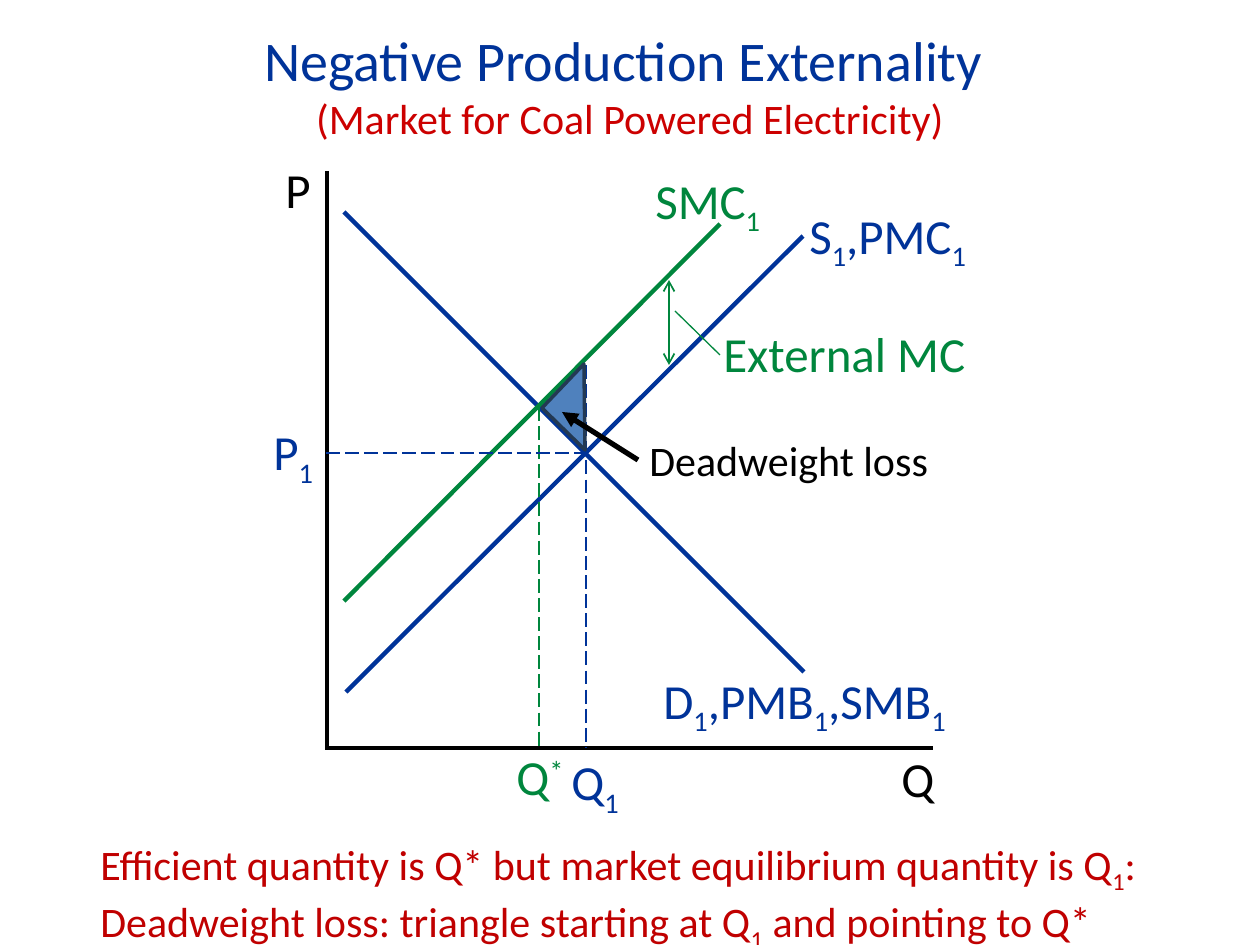
import pptx
import pptx.util
import pptx.dml.color
import pptx.enum.dml
import pptx.enum.shapes
import pptx.enum.text
import pptx.oxml.ns
import lxml.etree

RGB = pptx.dml.color.RGBColor
BLUE = RGB(0x00, 0x33, 0x99)
GREEN = RGB(0x00, 0x86, 0x3D)
BLACK = RGB(0, 0, 0)
RED = RGB(0xCC, 0, 0)
DARK_RED = RGB(0xC0, 0, 0)
FILL = RGB(0x4F, 0x81, 0xBD)
EDGE = RGB(0x23, 0x39, 0x53)
FONT = "Calibri"
SCALE = 914400 / 126
SHIFT = {"1": "-25000", "*": "30000"}

# Every second piece between bars is a subscript or superscript.
# text, box (left, top, width, height), size, colour, line spacing
LABELS = [
    ("D|1|,PMB|1|,SMB|1", (651, 664, 325, 72), 28, BLUE, None),
    ("Q", (889, 742, 64, 72), 28, BLACK, None),
    ("P", (273, 165, 57, 62), 28, BLACK, 0.8),
    ("S|1|,PMC|1", (797, 199, 189, 72), 28, BLUE, None),
    ("Q|1", (559, 752, 94, 60), 28, BLUE, 0.8),
    ("SMC|1", (643, 164, 151, 72), 28, GREEN, None),
    ("Q|*", (504, 752, 94, 62), 28, GREEN, 0.8),
    ("External MC", (711, 317, 276, 72), 28, GREEN, None),
    ("Deadweight loss", (637, 428, 306, 63), 24, BLACK, None),
    ("P|1", (261, 422, 73, 62), 28, BLUE, 0.8),
]
TITLE = [("Negative Production Externality ", 32, BLUE),
         ("(Market for Coal Powered Electricity)", 24, RED)]
NOTES = ["Efficient quantity is Q* but market equilibrium quantity is Q|1|:",
         "Deadweight loss: triangle starting at Q|1| and pointing to Q*"]

# start, end, colour, width in points
CURVES = [
    ((346, 692), (803, 236), BLUE, 2.5),
    ((327, 171), (327, 750), BLACK, 2.5),
    ((329, 748), (933, 748), BLACK, 2.5),
    ((344, 212), (804, 672), BLUE, 2.5),
    ((344, 601), (720, 224), GREEN, 2.5),
    ((675, 311), (720, 355), GREEN, 0.75),
]
GUIDES = [
    ((586, 365), (586, 747), BLUE, 1),
    ((539, 407), (539, 747), GREEN, 1),
    ((326, 453), (585, 453), BLUE, 1),
]
GAP = ((669, 280), (669, 365), GREEN, 1)
POINTER = ((638, 460), (562, 412), BLACK, 3)
LOSS = [(584, 364), (585, 450), (542, 408)]


def px(num):
    return pptx.util.Emu(round(num * SCALE))


def add_box(slide, box):
    frame = slide.shapes.add_textbox(*map(px, box)).text_frame
    frame.word_wrap = True
    return frame


def add_runs(para, text, size, color):
    """Fill a paragraph, shifting every second piece off the baseline."""
    for num, piece in enumerate(text.split("|")):
        run = para.add_run()
        run.text = piece
        run.font.name = FONT
        run.font.size = pptx.util.Pt(size)
        run.font.color.rgb = color
        if num % 2:
            run.font._element.set("baseline", SHIFT[piece])


def next_para(frame, num):
    return frame.add_paragraph() if num else frame.paragraphs[0]


def add_line(slide, start, end, color, width, dash=False, head=None, tail=None):
    kind = pptx.enum.shapes.MSO_CONNECTOR.STRAIGHT
    shape = slide.shapes.add_connector(kind, *map(px, start + end))
    shape.line.color.rgb = color
    shape.line.width = pptx.util.Pt(width)
    if dash:
        shape.line.dash_style = pptx.enum.dml.MSO_LINE.LONG_DASH
    props = shape._element.spPr
    tag = pptx.oxml.ns.qn
    for name, style in (("a:headEnd", head), ("a:tailEnd", tail)):
        if style:
            stroke = props.find(tag("a:ln"))
            lxml.etree.SubElement(stroke, tag(name), type=style)
    lxml.etree.SubElement(props, tag("a:effectLst"))


def add_loss(slide):
    first, *rest = [tuple(map(px, point)) for point in LOSS]
    path = slide.shapes.build_freeform(*first)
    path.add_line_segments(rest, close=True)
    shape = path.convert_to_shape()
    shape.shadow.inherit = False
    shape.fill.solid()
    shape.fill.fore_color.rgb = FILL
    shape.line.color.rgb = EDGE
    shape.line.width = pptx.util.Pt(2)


def main():
    deck = pptx.Presentation()
    deck.slide_width, deck.slide_height = px(1260), px(945)
    slide = deck.slides.add_slide(deck.slide_layouts[6])

    for curve in CURVES:
        add_line(slide, *curve)
    for guide in GUIDES:
        add_line(slide, *guide, dash=True)
    add_line(slide, *GAP, head="arrow", tail="arrow")
    add_loss(slide)
    add_line(slide, *POINTER, tail="triangle")

    for text, box, size, color, space in LABELS:
        para = add_box(slide, box).paragraphs[0]
        para.line_spacing = space
        add_runs(para, text, size, color)

    frame = add_box(slide, (88, 19, 1084, 131))
    frame.vertical_anchor = pptx.enum.text.MSO_ANCHOR.MIDDLE
    for num, (text, size, color) in enumerate(TITLE):
        para = next_para(frame, num)
        para.alignment = pptx.enum.text.PP_ALIGN.CENTER
        add_runs(para, text, size, color)

    frame = add_box(slide, (88, 832, 1099, 115))
    for num, text in enumerate(NOTES):
        add_runs(next_para(frame, num), text, 24, DARK_RED)

    deck.save("out.pptx")


if __name__ == "__main__":
    main()
